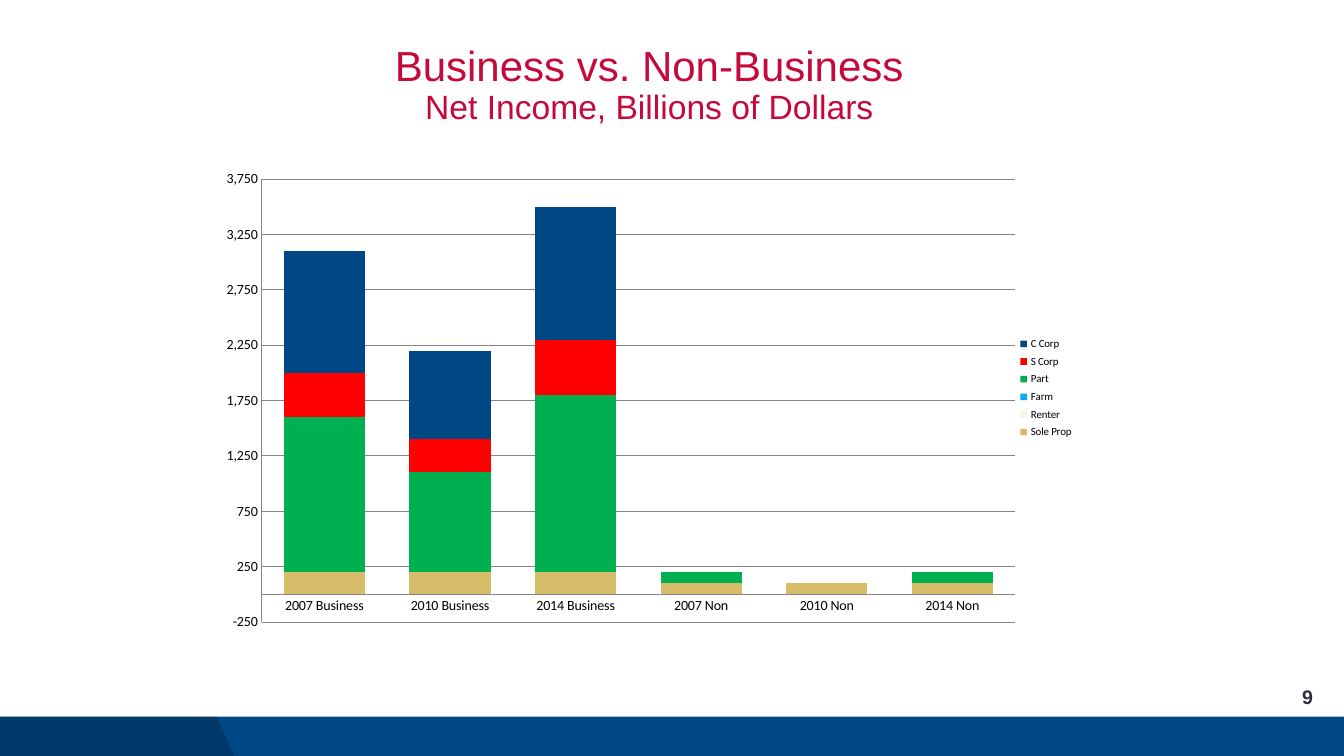
"""Build the Business vs. Non-Business net income slide."""
from dataclasses import dataclass

from lxml.etree import SubElement
from pptx import Presentation
from pptx.chart.data import CategoryChartData
from pptx.dml.color import RGBColor
from pptx.enum.chart import XL_CHART_TYPE as ChartType
from pptx.enum.chart import XL_LEGEND_POSITION as LegendPosition
from pptx.enum.chart import XL_TICK_MARK as TickMark
from pptx.enum.shapes import MSO_SHAPE as ShapeKind
from pptx.enum.text import MSO_ANCHOR as Anchor
from pptx.enum.text import PP_ALIGN as Align
from pptx.oxml.ns import qn
from pptx.util import Inches, Pt

COLORS = {
    "navy": "004785", "shade": "000000", "title": "C5093B", "number": "2D2C41",
    "text": "000000", "grid": "868686", "sand": "D7BC6A", "cream": "F7F2E1",
    "sky": "06AAFC", "green": "00B050", "red": "FF0000",
}
WIDTH, HEIGHT, BAND_TOP = 13.33, 7.5, 7.11


@dataclass(frozen=True)
class Line:
    text: str
    size: float
    color: str
    bold: bool = False


@dataclass(frozen=True)
class TextBlock:
    box: tuple[float, float, float, float]
    lines: tuple[Line, ...]
    alignment: Align
    anchor: Anchor
    side_inset: float = 0.0
    line_spacing: float = 1.0


@dataclass(frozen=True)
class IncomeSeries:
    name: str
    color: str
    values: tuple[int, ...]


TEXT_BLOCKS = (
    TextBlock((2.13, 0.4, 8.62, 0.92),
              (Line("Business vs. Non-Business", 30, "title"),
               Line("Net Income, Billions of Dollars", 24, "title")),
              Align.CENTER, Anchor.TOP, line_spacing=0.9),
    TextBlock((10.12, 6.71, 3, 0.4), (Line("9", 14, "number", True),),
              Align.RIGHT, Anchor.MIDDLE, side_inset=0.1),
)
CATEGORIES = [f"{year} {group}" for group in ("Business", "Non")
              for year in (2007, 2010, 2014)]
INCOME = (
    IncomeSeries("Sole Prop", "sand", (200, 200, 200, 100, 100, 100)),
    IncomeSeries("Renter", "cream", (0, 0, 0, 0, 0, 0)),
    IncomeSeries("Farm", "sky", (0, 0, 0, 0, 0, 0)),
    IncomeSeries("Part", "green", (1400, 900, 1600, 100, 0, 100)),
    IncomeSeries("S Corp", "red", (400, 300, 500, 0, 0, 0)),
    IncomeSeries("C Corp", "navy", (1100, 800, 1200, 0, 0, 0)),
)


def rgb(name: str) -> RGBColor:
    return RGBColor.from_string(COLORS[name])


def apply_format(target, values: dict) -> None:
    for name, value in values.items():
        setattr(target, name, value)


def format_font(font, size: float, color: str = "text",
                family: str = "Calibri", bold: bool = False) -> None:
    apply_format(font, {"name": family, "size": Pt(size), "bold": bold})
    font.color.rgb = rgb(color)


def fill_shape(shape, color: str) -> None:
    shape.shadow.inherit = False
    shape.fill.solid()
    shape.fill.fore_color.rgb = rgb(color)
    shape.line.fill.background()


def add_footer(slide) -> None:
    band = slide.shapes.add_shape(
        ShapeKind.RECTANGLE, 0, Inches(BAND_TOP), Inches(WIDTH), Inches(HEIGHT - BAND_TOP))
    fill_shape(band, "navy")
    builder = slide.shapes.build_freeform(0, Inches(BAND_TOP))
    corners = ((2.15, BAND_TOP), (2.32, HEIGHT), (0, HEIGHT))
    builder.add_line_segments([(Inches(x), Inches(y)) for x, y in corners])
    corner = builder.convert_to_shape()
    fill_shape(corner, "shade")
    color = next(corner._element.spPr.iter(qn("a:srgbClr")))
    SubElement(color, qn("a:alpha"), val="20000")


def add_text(slide, block: TextBlock) -> None:
    frame = slide.shapes.add_textbox(*map(Inches, block.box)).text_frame
    apply_format(frame, {
        "word_wrap": True, "vertical_anchor": block.anchor,
        "margin_left": Inches(block.side_inset), "margin_right": Inches(block.side_inset),
        "margin_top": Inches(0.05), "margin_bottom": Inches(0.05),
    })
    paragraph = frame.paragraphs[0]
    apply_format(paragraph, {"alignment": block.alignment, "line_spacing": block.line_spacing})
    for index, line in enumerate(block.lines):
        if index:
            paragraph.add_line_break()
        run = paragraph.add_run()
        run.text = line.text
        format_font(run.font, line.size, line.color, "Arial", line.bold)


def place_plot(chart) -> None:
    plot_area = chart._chartSpace.chart.plotArea
    for old in plot_area.findall(qn("c:layout")):
        plot_area.remove(old)
    layout = SubElement(plot_area, qn("c:layout"))
    plot_area.insert(0, layout)
    manual = SubElement(layout, qn("c:manualLayout"))
    settings = {"layoutTarget": "inner", "xMode": "edge", "yMode": "edge",
                "x": "0.054", "y": "0.068", "w": "0.867", "h": "0.916"}
    for name, value in settings.items():
        SubElement(manual, qn(f"c:{name}"), val=value)


def add_income_chart(slide) -> None:
    data = CategoryChartData(number_format="#,##0")
    data.categories = CATEGORIES
    for income in INCOME:
        data.add_series(income.name, income.values)
    chart = slide.shapes.add_chart(
        ChartType.COLUMN_STACKED, *map(Inches, (2.13, 1.45, 8.62, 4.8)), data).chart
    apply_format(chart, {"has_title": False, "has_legend": True})
    format_font(chart.font, 10)
    apply_format(chart.legend, {"position": LegendPosition.RIGHT, "include_in_layout": False})
    format_font(chart.legend.font, 7.8)

    plot = chart.plots[0]
    apply_format(plot, {"gap_width": 55, "overlap": 100, "vary_by_categories": False})
    for series, income in zip(plot.series, INCOME):
        series.invert_if_negative = False
        series.format.fill.solid()
        series.format.fill.fore_color.rgb = rgb(income.color)

    value_axis = chart.value_axis
    apply_format(value_axis, {"minimum_scale": -250, "maximum_scale": 3750,
                              "major_unit": 500, "has_major_gridlines": True})
    apply_format(value_axis.tick_labels,
                 {"number_format": "#,##0", "number_format_is_linked": False})
    for axis in (chart.category_axis, value_axis):
        apply_format(axis, {"major_tick_mark": TickMark.NONE, "minor_tick_mark": TickMark.NONE})
        format_font(axis.tick_labels.font, 10)
    for part in (chart.category_axis, value_axis, value_axis.major_gridlines):
        part.format.line.color.rgb = rgb("grid")
        part.format.line.width = Pt(0.75)
    place_plot(chart)


def main() -> None:
    presentation = Presentation()
    apply_format(presentation, {"slide_width": Inches(WIDTH), "slide_height": Inches(HEIGHT)})
    slide = presentation.slides.add_slide(presentation.slide_layouts[6])
    add_footer(slide)
    for block in TEXT_BLOCKS:
        add_text(slide, block)
    add_income_chart(slide)
    presentation.save("out.pptx")


if __name__ == "__main__":
    main()
